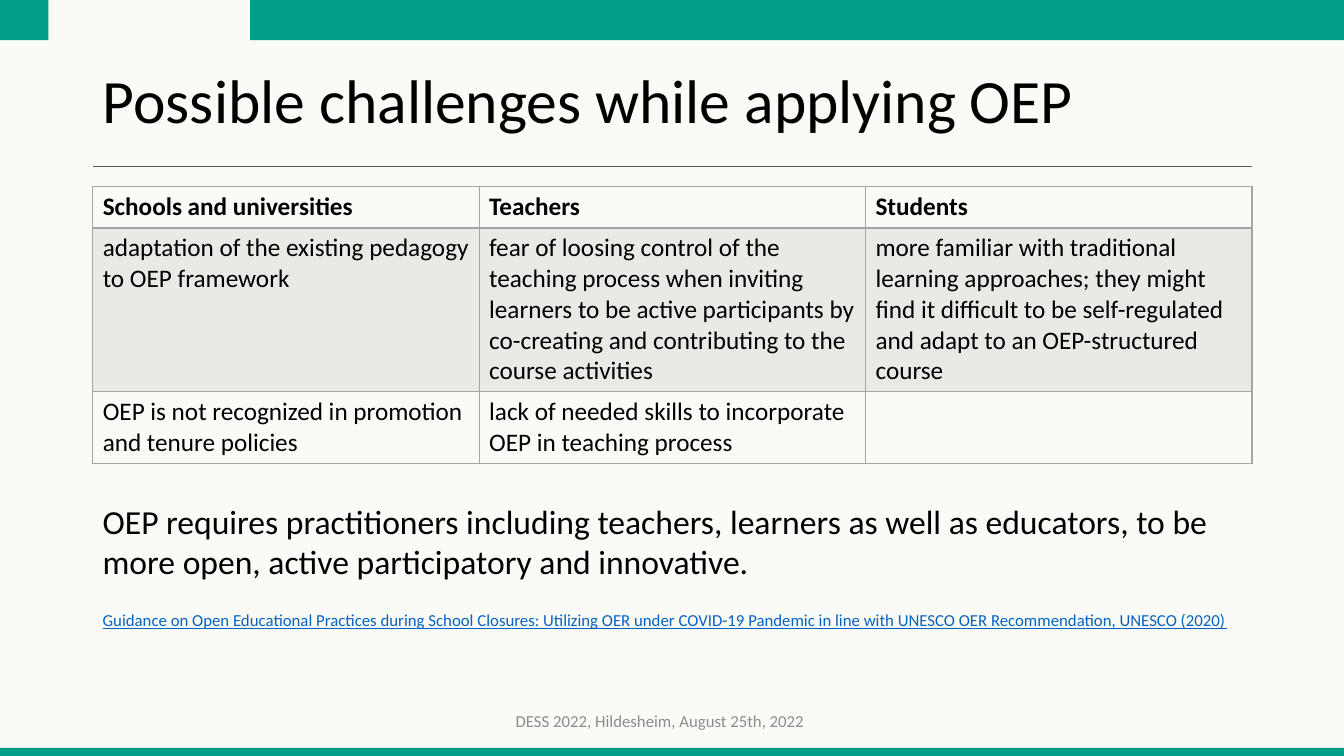
from lxml.etree import SubElement
from pptx import Presentation
from pptx.dml.color import RGBColor
from pptx.enum.shapes import MSO_CONNECTOR, MSO_SHAPE
from pptx.enum.text import MSO_ANCHOR, MSO_AUTO_SIZE, PP_ALIGN
from pptx.oxml.ns import qn
from pptx.util import Inches, Pt

BACKGROUND = RGBColor(0xFA, 0xFA, 0xF6)
GREEN = RGBColor(0x00, 0x9D, 0x88)
BLACK = RGBColor(0x00, 0x00, 0x00)
RULE = RGBColor(0x59, 0x59, 0x59)
GRID = RGBColor(0xA5, 0xA5, 0xA5)
LINK = RGBColor(0x05, 0x63, 0xC1)
FOOTER = RGBColor(0x8C, 0x8C, 0x8C)

# Shares of the slide, in percent
LEFT, WIDTH = 6.9, 86.25
BARS = [(0, 0, 3.6, 5.33), (18.6, 0, 81.4, 5.33), (0, 98.93, 100, 1.07)]
ROW_HEIGHTS = [5.47, 21.33, 9.33]

CHALLENGES = [
    ["Schools and universities", "Teachers", "Students"],
    ["adaptation of the existing pedagogy to OEP framework",
     "fear of loosing control of the teaching process when inviting learners to be "
     "active participants by co-creating and contributing to the course activities",
     "more familiar with traditional learning approaches; they might find it "
     "difficult to be self-regulated and adapt to an OEP-structured course"],
    ["OEP is not recognized in promotion and tenure policies",
     "lack of needed skills to incorporate OEP in teaching process", ""],
]


def write(tf, text, size=18, color=BLACK, bold=False, underline=False,
          align=PP_ALIGN.LEFT, anchor=MSO_ANCHOR.TOP, spacing=None):
    tf.word_wrap = True
    tf.vertical_anchor = anchor
    p = tf.paragraphs[0]
    p.alignment = align
    p.line_spacing = spacing
    r = p.add_run()
    r.text = text
    r.font.name = "Calibri"
    r.font.size = Pt(size)
    r.font.bold = bold
    r.font.underline = underline
    r.font.color.rgb = color


def set_border(cell, side, width):
    """Draw one side of a cell; call in the order L, R, T, B, before the fill."""
    ln = SubElement(cell._tc.get_or_add_tcPr(), qn(f"a:ln{side}"), w=str(Pt(width)))
    SubElement(SubElement(ln, qn("a:solidFill")), qn("a:srgbClr"), val=str(GRID))


class SlideBuilder:
    def __init__(self, prs):
        self.prs = prs
        self.slide = prs.slides.add_slide(prs.slide_layouts[5])
        fill = self.slide.background.fill
        fill.solid()
        fill.fore_color.rgb = BACKGROUND

    def x(self, share):
        return round(self.prs.slide_width * share / 100)

    def y(self, share):
        return round(self.prs.slide_height * share / 100)

    def box(self, left, top, width, height):
        return self.x(left), self.y(top), self.x(width), self.y(height)

    def bar(self, *place):
        sp = self.slide.shapes.add_shape(MSO_SHAPE.RECTANGLE, *self.box(*place))
        sp.shadow.inherit = False
        sp.fill.solid()
        sp.fill.fore_color.rgb = GREEN
        sp.line.fill.background()

    def rule(self, left, top, width):
        line = self.slide.shapes.add_connector(
            MSO_CONNECTOR.STRAIGHT, self.x(left), self.y(top),
            self.x(left + width), self.y(top))
        line.line.color.rgb = RULE
        line.line.width = Pt(0.5)
        SubElement(line._element.spPr, qn("a:effectLst"))

    def title(self, text, *place):
        sp = self.slide.shapes.title
        sp.left, sp.top, sp.width, sp.height = self.box(*place)
        sp.text_frame.auto_size = MSO_AUTO_SIZE.NONE
        write(sp.text_frame, text, size=44, anchor=MSO_ANCHOR.MIDDLE, spacing=0.9)

    def text(self, text, *place, **style):
        sp = self.slide.shapes.add_textbox(*self.box(*place))
        write(sp.text_frame, text, **style)

    def table(self, rows, heights, left, top, width):
        place = self.box(left, top, width, sum(heights))
        table = self.slide.shapes.add_table(len(rows), len(rows[0]), *place).table
        table.horz_banding = False
        for i, (row, height) in enumerate(zip(rows, heights)):
            table.rows[i].height = self.y(height)
            for j, text in enumerate(row):
                cell = table.cell(i, j)
                widths = {"L": 1, "R": 1, "T": 2 if i == 1 else 1, "B": 2 if i == 0 else 1}
                for side, line_width in widths.items():
                    set_border(cell, side, line_width)
                self.shade(cell, i % 2 == 1)
                if text:
                    write(cell.text_frame, text, bold=i == 0)

    def shade(self, cell, shaded):
        if not shaded:
            cell.fill.background()
            return
        cell.fill.solid()
        cell.fill.fore_color.rgb = GRID
        color = cell._tc.tcPr.find(qn("a:solidFill")).find(qn("a:srgbClr"))
        SubElement(color, qn("a:alpha"), val="20000")


def main():
    prs = Presentation()
    prs.slide_width, prs.slide_height = Inches(13.33), Inches(7.5)
    s = SlideBuilder(prs)
    for place in BARS:
        s.bar(*place)
    s.rule(LEFT, 22, WIDTH)
    s.title("Possible challenges while applying OEP", LEFT, 5.33, WIDTH, 16.67)
    s.table(CHALLENGES, ROW_HEIGHTS, LEFT, 24.67, WIDTH)
    s.text("OEP requires practitioners including teachers, learners as well as educators, "
           "to be more open, active participatory and innovative.",
           LEFT, 65.6, WIDTH, 12.13, size=24)
    s.text("Guidance on Open Educational Practices during School Closures: Utilizing OER "
           "under COVID-19 Pandemic in line with UNESCO OER Recommendation, UNESCO (2020)",
           LEFT, 80, WIDTH, 4, size=12, color=LINK, underline=True)
    s.text("DESS 2022, Hildesheim, August 25th, 2022", 24.76, 92.67, 48.69, 5.33,
           size=12, color=FOOTER, align=PP_ALIGN.CENTER, anchor=MSO_ANCHOR.MIDDLE)
    prs.save("out.pptx")


if __name__ == "__main__":
    main()
